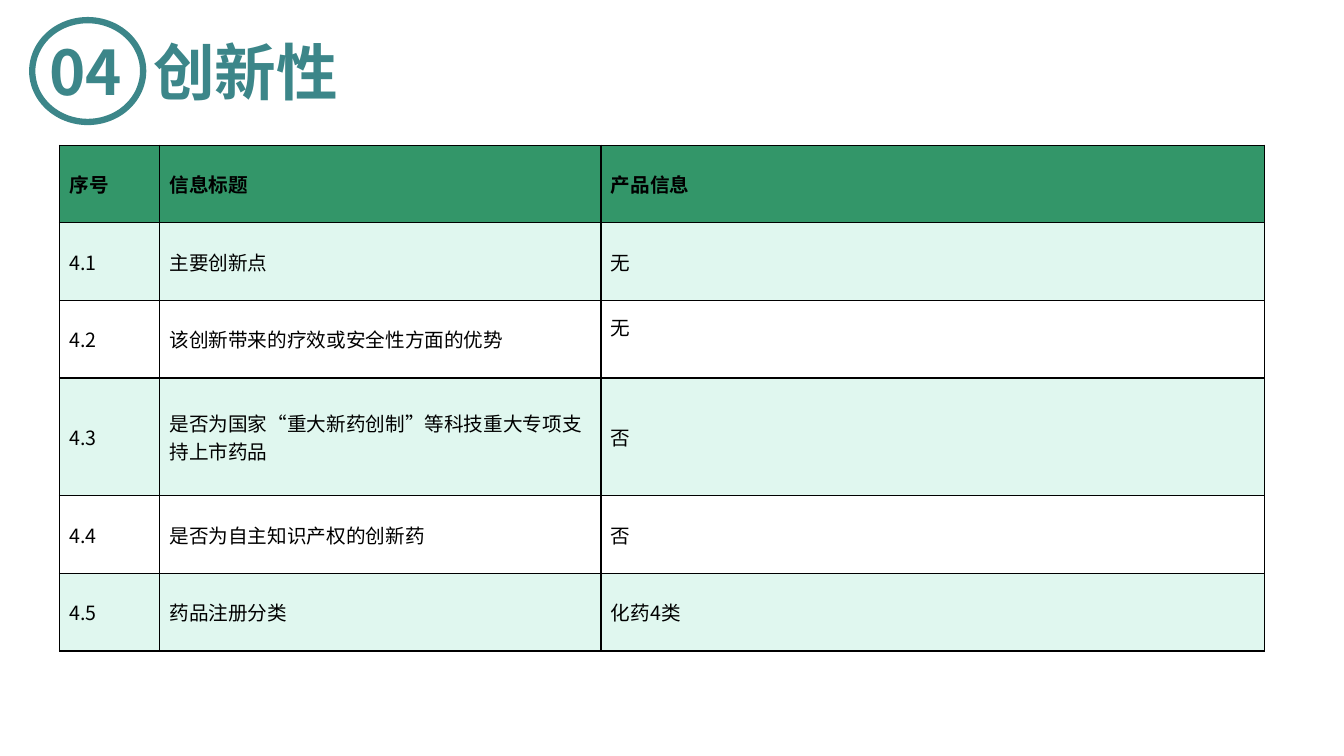
from lxml import etree
from pptx import Presentation
from pptx.dml.color import RGBColor
from pptx.enum.shapes import MSO_SHAPE
from pptx.enum.text import MSO_ANCHOR, MSO_AUTO_SIZE, PP_ALIGN
from pptx.oxml.ns import qn
from pptx.util import Inches, Pt

OVAL = MSO_SHAPE.OVAL
MIDDLE, TOP = MSO_ANCHOR.MIDDLE, MSO_ANCHOR.TOP
LEFT = PP_ALIGN.LEFT
NO_FIT = MSO_AUTO_SIZE.NONE
TITLE_ONLY = 5

FONT = "Noto Sans CJK SC"
TEAL, BLACK = "3C8689", "000000"
HEADER_FILL, BAND_FILLS = "339669", ("E0F7EF", "FFFFFF")

COLUMN_WIDTHS = (0.99, 4.38, 6.58)
ROW_HEIGHTS = (0.77, 0.77, 0.77, 1.17, 0.77, 0.77)
ROWS = (
    ("序号", "信息标题", "产品信息"),
    ("4.1", "主要创新点", "无"),
    ("4.2", "该创新带来的疗效或安全性方面的优势", "无"),
    ("4.3", "是否为国家“重大新药创制”等科技重大专项支持上市药品", "否"),
    ("4.4", "是否为自主知识产权的创新药", "否"),
    ("4.5", "药品注册分类", "化药4类"),
)
RAISED_CELL = (2, 2)


def color(value):
    """Return the colour for a hex string."""
    return RGBColor.from_string(value)


def apply(target, values):
    """Set each attribute named in a dict of format values."""
    for name, value in values.items():
        setattr(target, name, value)


class SlideBuilder:
    """Hold the style and the current slide."""

    def __init__(self, slide):
        """Keep the slide and the heading format."""
        self.slide = slide
        self.heading = {"size": Pt(44), "bold": True}

    def add_text(self, frame, text, values, shade):
        """Put one formatted run into a text frame."""
        para = frame.paragraphs[0]
        para.alignment = LEFT
        span = para.add_run()
        span.text = text
        apply(span.font, {"name": FONT, **values})
        span.font.color.rgb = color(shade)
        etree.SubElement(span.font._element, qn("a:ea"), typeface=FONT)

    def place_heading(self, box, text, bounds, wrap):
        """Position a box and put heading text in it."""
        names = ("left", "top", "width", "height")
        apply(box, dict(zip(names, map(Inches, bounds))))
        apply(box.text_frame, {"word_wrap": wrap, "auto_size": NO_FIT,
                               "vertical_anchor": MIDDLE})
        self.add_text(box.text_frame, text, self.heading, TEAL)

    def title(self, text, *bounds):
        """Fill the title placeholder."""
        self.place_heading(self.slide.shapes.title, text, bounds, False)

    def label(self, text, *bounds):
        """Add a text box in the heading style."""
        box = self.slide.shapes.add_textbox(*map(Inches, bounds))
        self.place_heading(box, text, bounds, True)

    def ring(self, *bounds):
        """Add an outlined ellipse."""
        ring = self.slide.shapes.add_shape(OVAL, *map(Inches, bounds))
        ring.shadow.inherit = False
        ring.fill.background()
        ring.line.color.rgb = color(TEAL)
        ring.line.width = Pt(4.5)

    def border(self, cell):
        """Draw the four borders of a cell ahead of its fill."""
        properties = cell._tc.get_or_add_tcPr()
        for index, side in enumerate(("lnL", "lnR", "lnT", "lnB")):
            line = etree.Element(qn(f"a:{side}"), w=str(Pt(1)))
            fill = etree.SubElement(line, qn("a:solidFill"))
            etree.SubElement(fill, qn("a:srgbClr"), val=BLACK)
            properties.insert(index, line)

    def table(self, left, top):
        """Add the banded information table."""
        table = self.slide.shapes.add_table(
            len(ROWS), len(COLUMN_WIDTHS), Inches(left), Inches(top),
            Inches(sum(COLUMN_WIDTHS)), Inches(sum(ROW_HEIGHTS))).table
        for column, width in zip(table.columns, COLUMN_WIDTHS):
            column.width = Inches(width)
        for row_index, texts in enumerate(ROWS):
            table.rows[row_index].height = Inches(ROW_HEIGHTS[row_index])
            header = row_index == 0
            shade = HEADER_FILL if header else BAND_FILLS[(row_index - 1) % 2]
            for column_index, text in enumerate(texts):
                cell = table.cell(row_index, column_index)
                cell.vertical_anchor = MIDDLE
                cell.fill.solid()
                cell.fill.fore_color.rgb = color(shade)
                self.border(cell)
                self.add_text(cell.text_frame, text,
                              {"size": Pt(14), "bold": header}, BLACK)
        apply(table.cell(*RAISED_CELL),
              {"vertical_anchor": TOP, "margin_top": Inches(0.12)})


def main():
    """Build and save the deck."""
    deck = Presentation()
    apply(deck, {"slide_width": Inches(13.33), "slide_height": Inches(7.5)})
    page = SlideBuilder(deck.slides.add_slide(deck.slide_layouts[TITLE_ONLY]))
    page.title("创新性", 1.42, 0.28, 2.05, 0.84)
    page.table(0.59, 1.44)
    page.ring(0.32, 0.2, 1.1, 1.01)
    page.label("04", 0.39, 0.28, 1.09, 0.84)
    deck.save("out.pptx")


if __name__ == "__main__":
    main()
